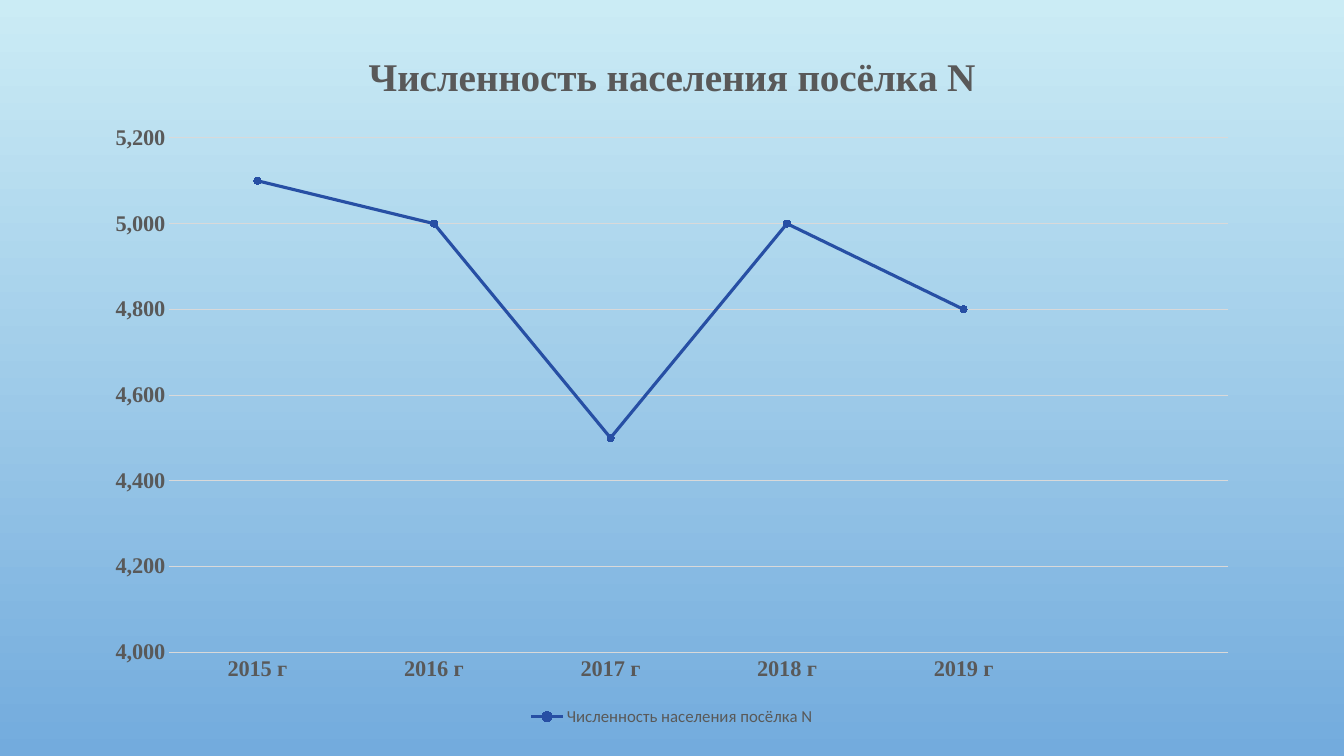
import pptx
import pptx.chart.data
import pptx.dml.color
import pptx.enum.chart
import pptx.util

RGBColor = pptx.dml.color.RGBColor
SKY_TOP = RGBColor(0xCB, 0xEC, 0xF5)
SKY_BOTTOM = RGBColor(0x73, 0xAB, 0xDD)
GREY_TEXT = RGBColor(0x59, 0x59, 0x59)
GREY_LINE = RGBColor(0xD9, 0xD9, 0xD9)
BLUE = RGBColor(0x27, 0x4F, 0xA4)

EMU_PER_PX = 9525
SERIF = "Times New Roman"
SANS = "Calibri"

TITLE = "Численность населения посёлка N"
# The last category is an empty slot at the right end of the axis.
POPULATION = {
    "2015 г": 5100,
    "2016 г": 5000,
    "2017 г": 4500,
    "2018 г": 5000,
    "2019 г": 4800,
    "": None,
}


def px(length):
    return pptx.util.Emu(length * EMU_PER_PX)


def apply_format(target, values):
    for name, value in values.items():
        setattr(target, name, value)


class PopulationSlide:
    """Holds the current slide and the style of its elements."""

    def __init__(self, deck):
        self.page = deck.slides.add_slide(deck.slide_layouts[6])

    def style_font(self, font, size, name=SERIF, bold=True):
        apply_format(font, {"size": pptx.util.Pt(size), "name": name, "bold": bold})
        font.color.rgb = GREY_TEXT

    def style_line(self, line, color, width):
        line.color.rgb = color
        line.width = pptx.util.Pt(width)

    def paint_background(self, *colors):
        fill = self.page.background.fill
        fill.gradient()
        fill.gradient_angle = 270
        for stop, color in zip(fill.gradient_stops, colors):
            stop.color.rgb = color

    def add_line_chart(self, left, top, width, height):
        data = pptx.chart.data.CategoryChartData(number_format="#,##0")
        data.categories = list(POPULATION)
        data.add_series(TITLE, list(POPULATION.values()))
        chart = self.page.shapes.add_chart(
            pptx.enum.chart.XL_CHART_TYPE.LINE_MARKERS,
            px(left), px(top), px(width), px(height), data,
        ).chart
        self.style_font(chart.font, 10, SANS, False)
        self.add_chart_title(chart)
        self.style_axes(chart)
        self.style_series(chart.plots[0])
        self.add_legend(chart)

    def add_chart_title(self, chart):
        chart.has_title = True
        chart.chart_title.include_in_layout = False
        para = chart.chart_title.text_frame.paragraphs[0]
        span = para.add_run()
        span.text = TITLE
        self.style_font(span.font, 28)

    def style_axes(self, chart):
        no_tick = pptx.enum.chart.XL_TICK_MARK.NONE
        for axis in (chart.category_axis, chart.value_axis):
            apply_format(axis, {"major_tick_mark": no_tick, "minor_tick_mark": no_tick})
            self.style_font(axis.tick_labels.font, 16)
        self.style_line(chart.category_axis.format.line, GREY_LINE, 0.75)
        values = chart.value_axis
        apply_format(values, {
            "minimum_scale": 4000,
            "maximum_scale": 5200,
            "major_unit": 200,
            "has_major_gridlines": True,
        })
        apply_format(values.tick_labels, {
            "number_format": "#,##0",
            "number_format_is_linked": False,
        })
        values.format.line.fill.background()
        self.style_line(values.major_gridlines.format.line, GREY_LINE, 0.75)

    def style_series(self, plot):
        plot.vary_by_categories = False
        series = plot.series[0]
        series.smooth = False
        self.style_line(series.format.line, BLUE, 2.25)
        marker = series.marker
        apply_format(marker, {
            "style": pptx.enum.chart.XL_MARKER_STYLE.CIRCLE,
            "size": 5,
        })
        marker.format.fill.solid()
        marker.format.fill.fore_color.rgb = BLUE
        self.style_line(marker.format.line, BLUE, 0.75)

    def add_legend(self, chart):
        chart.has_legend = True
        apply_format(chart.legend, {
            "position": pptx.enum.chart.XL_LEGEND_POSITION.BOTTOM,
            "include_in_layout": False,
        })
        self.style_font(chart.legend.font, 12, SANS, False)


def main():
    deck = pptx.Presentation()
    apply_format(deck, {"slide_width": px(1280), "slide_height": px(720)})
    slide = PopulationSlide(deck)
    slide.paint_background(SKY_TOP, SKY_BOTTOM)
    slide.add_line_chart(88, 24, 1104, 672)
    deck.save("out.pptx")


if __name__ == "__main__":
    main()
